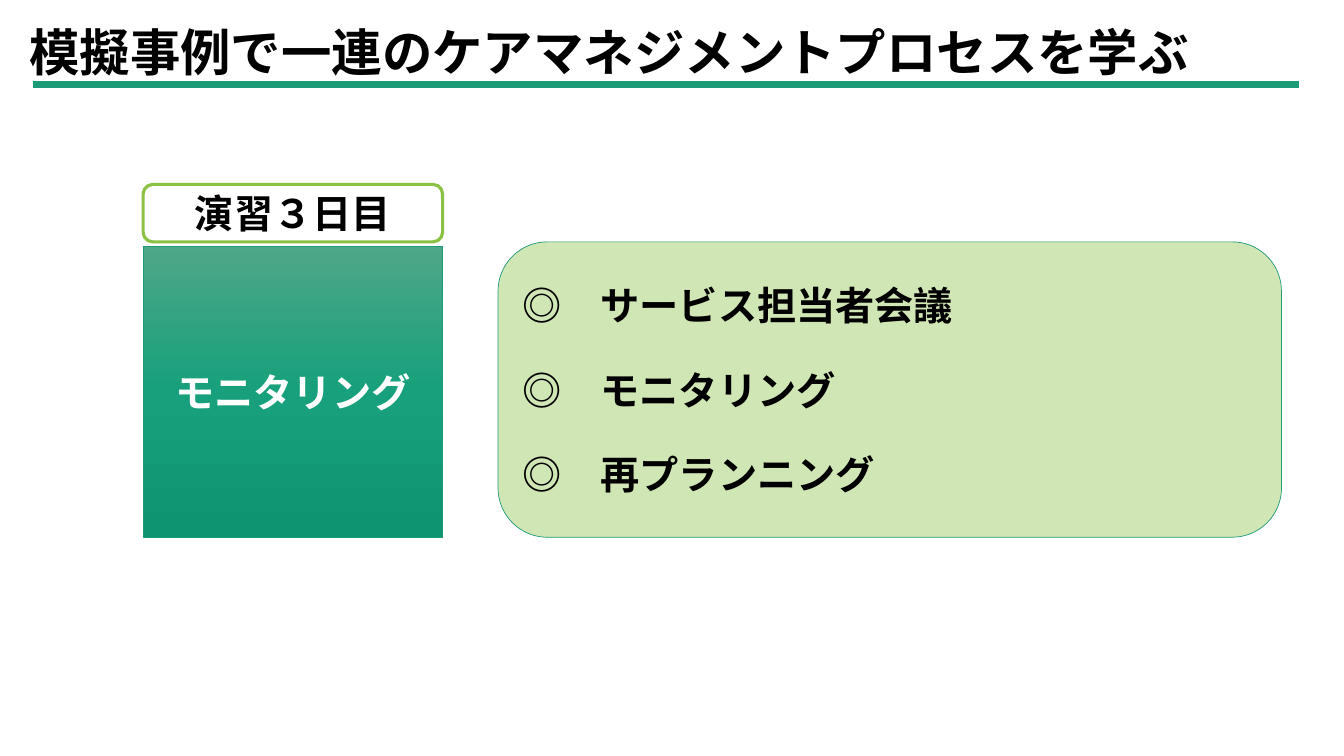
import copy
from pptx import Presentation
from pptx import util as u
from pptx.dml.color import RGBColor
from pptx.enum import shapes, text
from pptx.oxml import ns
from lxml import etree

PX = 9144
FONT = "Noto Sans CJK JP"
COLORS = {
    "black": "000000", "white": "FFFFFF", "green": "1D9A78",
    "lime": "8BC145", "pale": "D1E6B5",
    "light": "4EA788", "middle": "17A07B", "dark": "0F9470",
}


def color(name):
    return RGBColor.from_string(COLORS[name])


def write(shape, lines, size, ink, align, gap=0):
    frame = shape.text_frame
    frame.text = "\n".join(lines)
    settings = {"word_wrap": True, "auto_size": text.MSO_AUTO_SIZE.NONE,
                "vertical_anchor": text.MSO_ANCHOR.MIDDLE,
                "margin_top": 0, "margin_bottom": 0}
    for name, value in settings.items():
        setattr(frame, name, value)
    for index, para in enumerate(frame.paragraphs):
        para.alignment = align
        para.line_spacing = 1.0
        para.space_before = u.Pt(gap if index else 0)
        for span in para.runs:
            for name, value in {"name": FONT, "size": u.Pt(size), "bold": True}.items():
                setattr(span.font, name, value)
            span.font.color.rgb = color(ink)
            east = etree.SubElement(span.font._element, ns.qn("a:ea"))
            east.set("typeface", FONT)


deck = Presentation()
deck.slide_width, deck.slide_height = 1333 * PX, 750 * PX
page = deck.slides.add_slide(deck.slide_layouts[5])

LEFT, CENTER = text.PP_ALIGN.LEFT, text.PP_ALIGN.CENTER
ROUND, RECT = shapes.MSO_SHAPE.ROUNDED_RECTANGLE, shapes.MSO_SHAPE.RECTANGLE

title = page.shapes.title
for name, value in {"left": 19, "top": 15, "width": 1296, "height": 71}.items():
    setattr(title, name, value * PX)
write(title, ["模擬事例で一連のケアマネジメントプロセスを学ぶ"], 36, "black", LEFT)

rule = page.shapes.add_connector(
    shapes.MSO_CONNECTOR.STRAIGHT, 33 * PX, 84 * PX, 1288 * PX, 84 * PX)
rule.line.color.rgb = color("green")
rule.line.width = u.Pt(4.5)
etree.SubElement(rule._element.spPr, ns.qn("a:effectLst"))

boxes = [
    (ROUND, (494, 240, 777, 293), ["pale"], "green", 0.5, "black", LEFT,
     ["◎　サービス担当者会議", "◎　モニタリング", "◎　再プランニング"]),
    (ROUND, (142, 183, 297, 57), ["white"], "lime", 2.25, "black", CENTER,
     ["演習３日目"]),
    (RECT, (142, 244, 297, 289), ["light", "middle", "dark"], "green", 0.5, "white", CENTER,
     ["モニタリング"]),
]
for kind, place, fills, edge, weight, ink, align, lines in boxes:
    box = page.shapes.add_shape(kind, *(value * PX for value in place))
    box.shadow.inherit = False
    if len(fills) == 1:
        box.fill.solid()
        box.fill.fore_color.rgb = color(fills[0])
    else:
        box.fill.gradient()
        box.fill.gradient_angle = 270
        stop_list = box._element.spPr.find(".//" + ns.qn("a:gsLst"))
        stop_list.append(copy.deepcopy(stop_list[-1]))
        for index, stop in enumerate(box.fill.gradient_stops):
            stop.position = index / (len(fills) - 1)
            stop.color.rgb = color(fills[index])
    box.line.color.rgb = color(edge)
    box.line.width = u.Pt(weight)
    write(box, lines, 28, ink, align, gap=26.6)

deck.save("out.pptx")
